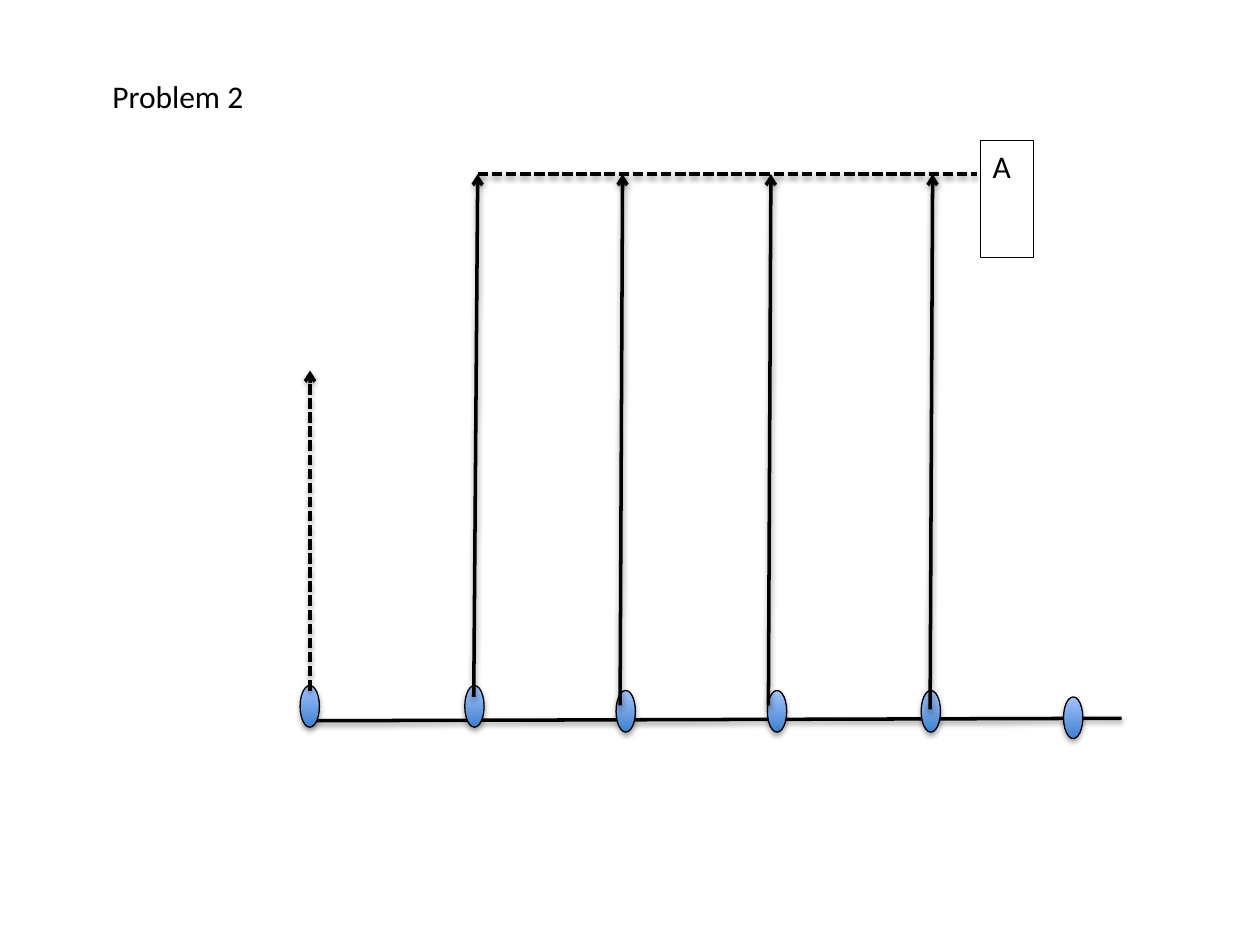
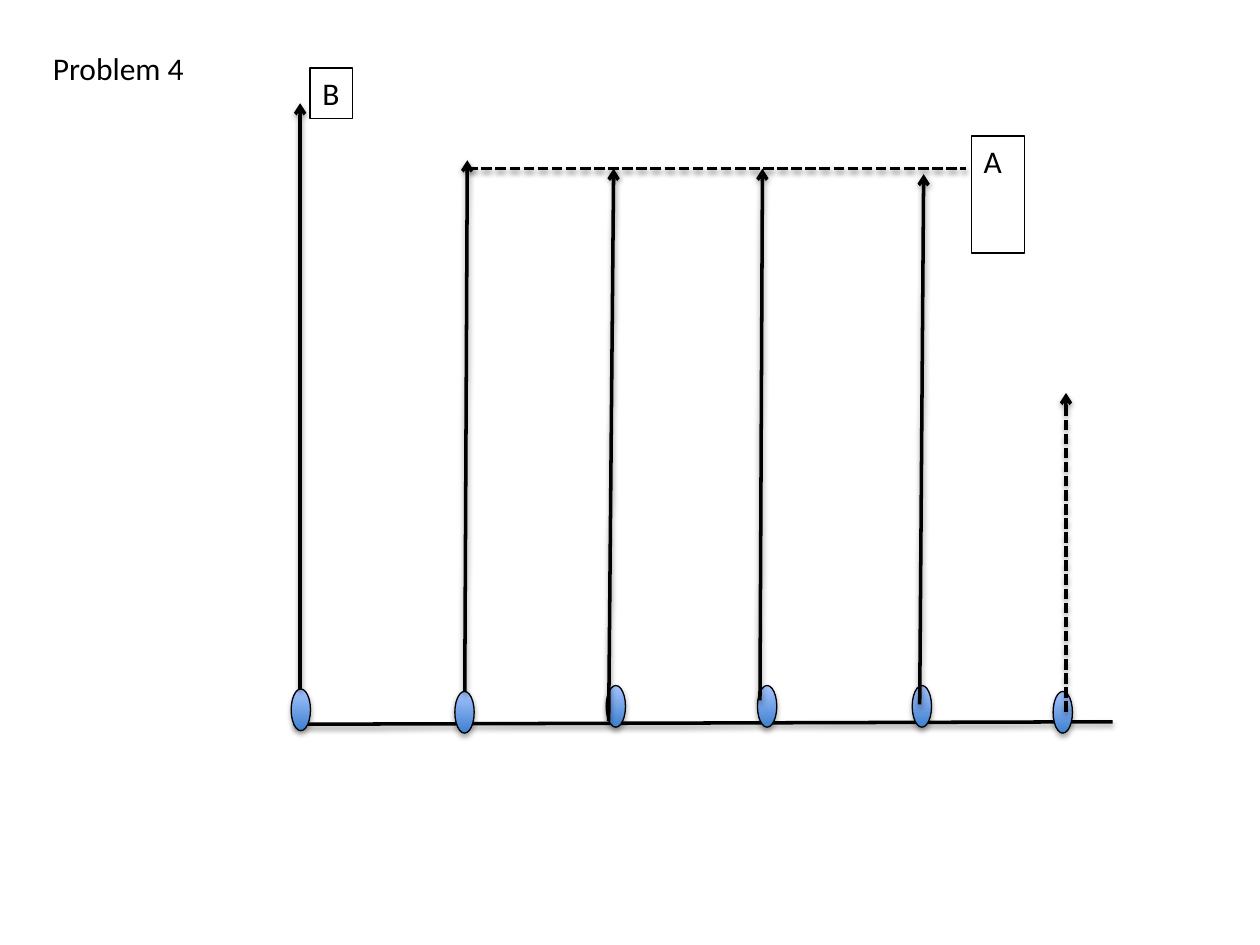
from dataclasses import dataclass

from lxml.etree import SubElement
from pptx import Presentation
from pptx.dml.color import RGBColor
from pptx.enum.dml import MSO_LINE_DASH_STYLE as Dash
from pptx.enum.shapes import MSO_CONNECTOR as Connector, MSO_SHAPE as Preset
from pptx.enum.text import MSO_ANCHOR as Anchor, MSO_AUTO_SIZE as AutoSize, PP_ALIGN as Align
from pptx.oxml.ns import qn
from pptx.util import Cm, Pt

FONT = "Calibri"
INK = "000000"
NODE_BOTTOM, NODE_TOP = "3F80CE", "A4C4FF"
NODE_WIDTH, NODE_HEIGHT = 0.39, 0.84
TITLE_WIDTH, TITLE_HEIGHT = 3.2, 1.02


@dataclass(frozen=True)
class Segment:
    """A line between two points, in centimetres."""
    x1: float
    y1: float
    x2: float
    y2: float
    dashed: bool = False
    arrow: bool = True


@dataclass(frozen=True)
class Label:
    text: str
    left: float
    top: float
    width: float
    height: float
    wrap: bool = True


@dataclass(frozen=True)
class Problem:
    title: str
    title_left: float
    title_top: float
    baseline: Segment
    nodes: tuple[tuple[float, float], ...]
    segments: tuple[Segment, ...]
    labels: tuple[Label, ...]


PROBLEMS = (
    Problem(
        "Problem 2", 2.01, 1.42,
        baseline=Segment(6.12, 14.53, 22.61, 14.48, arrow=False),
        nodes=((6.05, 13.82), (9.37, 13.82), (12.42, 13.92),
               (15.47, 13.92), (18.57, 13.92), (21.44, 14.05)),
        segments=(
            Segment(6.25, 13.92, 6.25, 7.47, dashed=True),
            Segment(9.55, 14.05, 9.63, 3.51),
            Segment(12.5, 14.22, 12.55, 3.51),
            Segment(15.49, 14.22, 15.54, 3.51),
            Segment(18.75, 14.3, 18.8, 3.51),
            Segment(9.63, 3.51, 19.69, 3.51, dashed=True, arrow=False),
        ),
        labels=(Label("A", 19.76, 2.84, 1.07, 2.36),),
    ),
    Problem(
        "Problem 4", 0.81, 0.86,
        baseline=Segment(5.92, 14.6, 22.43, 14.55, arrow=False),
        nodes=((5.87, 13.89), (9.17, 13.94), (12.22, 13.82),
               (15.27, 13.82), (18.39, 13.82), (21.23, 13.94)),
        segments=(
            Segment(21.49, 14.35, 21.49, 7.92, dashed=True),
            Segment(9.37, 13.94, 9.42, 3.23),
            Segment(12.27, 14.53, 12.37, 3.4),
            Segment(15.32, 14.12, 15.37, 3.4),
            Segment(18.54, 14.2, 18.62, 3.51),
            Segment(9.42, 3.4, 19.48, 3.4, dashed=True, arrow=False),
            Segment(6.05, 13.89, 6.05, 2.08),
        ),
        labels=(Label("A", 19.58, 2.74, 1.07, 2.36),
                Label("B", 6.25, 1.37, 0.86, 1.02, wrap=False)),
    ),
)


def color(value: str) -> RGBColor:
    return RGBColor.from_string(value)


def write(shape, text: str, *, size: float = 18, ink: str = INK, wrap: bool = True) -> None:
    frame = shape.text_frame
    frame.text = text
    frame.auto_size = AutoSize.NONE
    frame.word_wrap = wrap
    frame.vertical_anchor = Anchor.TOP
    paragraph = frame.paragraphs[0]
    paragraph.alignment = Align.LEFT
    font = paragraph.runs[0].font
    font.name, font.size = FONT, Pt(size)
    font.color.rgb = color(ink)


def outline(shape, width: float) -> None:
    shape.line.color.rgb = color(INK)
    shape.line.width = Pt(width)


def cast_shadow(shape, distance: float, opacity: int) -> None:
    """Add a soft shadow straight below; call once the outline is set."""
    effects = SubElement(shape._element.spPr, qn("a:effectLst"))
    shadow = SubElement(effects, qn("a:outerShdw"), blurRad=str(Pt(3.1)),
                        dist=str(Pt(distance)), dir="5400000", rotWithShape="0")
    ink = SubElement(shadow, qn("a:srgbClr"), val=INK)
    SubElement(ink, qn("a:alpha"), val=str(opacity * 1000))


def draw_segment(slide, segment: Segment) -> None:
    ends = (segment.x1, segment.y1, segment.x2, segment.y2)
    connector = slide.shapes.add_connector(Connector.STRAIGHT, *map(Cm, ends))
    outline(connector, 2)
    if segment.dashed:
        connector.line.dash_style = Dash.SQUARE_DOT
    if segment.arrow:
        SubElement(connector._element.spPr.find(qn("a:ln")), qn("a:tailEnd"), type="arrow")
    cast_shadow(connector, 1.6, 38)


def draw_node(slide, left: float, top: float) -> None:
    node = slide.shapes.add_shape(
        Preset.OVAL, *map(Cm, (left, top, NODE_WIDTH, NODE_HEIGHT)))
    node.fill.gradient()
    node.fill.gradient_angle = 90
    for stop, shade in zip(node.fill.gradient_stops, (NODE_BOTTOM, NODE_TOP)):
        stop.color.rgb = color(shade)
    outline(node, 0.75)
    cast_shadow(node, 1.8, 35)


def draw_label(slide, label: Label) -> None:
    box = slide.shapes.add_textbox(
        *map(Cm, (label.left, label.top, label.width, label.height)))
    outline(box, 0.75)
    write(box, label.text, wrap=label.wrap)


def draw_problem(deck, problem: Problem) -> None:
    slide = deck.slides.add_slide(deck.slide_layouts.get_by_name("Title Only"))
    title = slide.shapes.title
    title.left, title.top = Cm(problem.title_left), Cm(problem.title_top)
    title.width, title.height = Cm(TITLE_WIDTH), Cm(TITLE_HEIGHT)
    write(title, problem.title, wrap=False)
    draw_segment(slide, problem.baseline)
    for left, top in problem.nodes:
        draw_node(slide, left, top)
    for segment in problem.segments:
        draw_segment(slide, segment)
    for label in problem.labels:
        draw_label(slide, label)


def main() -> None:
    deck = Presentation()
    deck.slide_width, deck.slide_height = Cm(25.4), Cm(19.05)
    for problem in PROBLEMS:
        draw_problem(deck, problem)
    deck.save("out.pptx")


if __name__ == "__main__":
    main()
